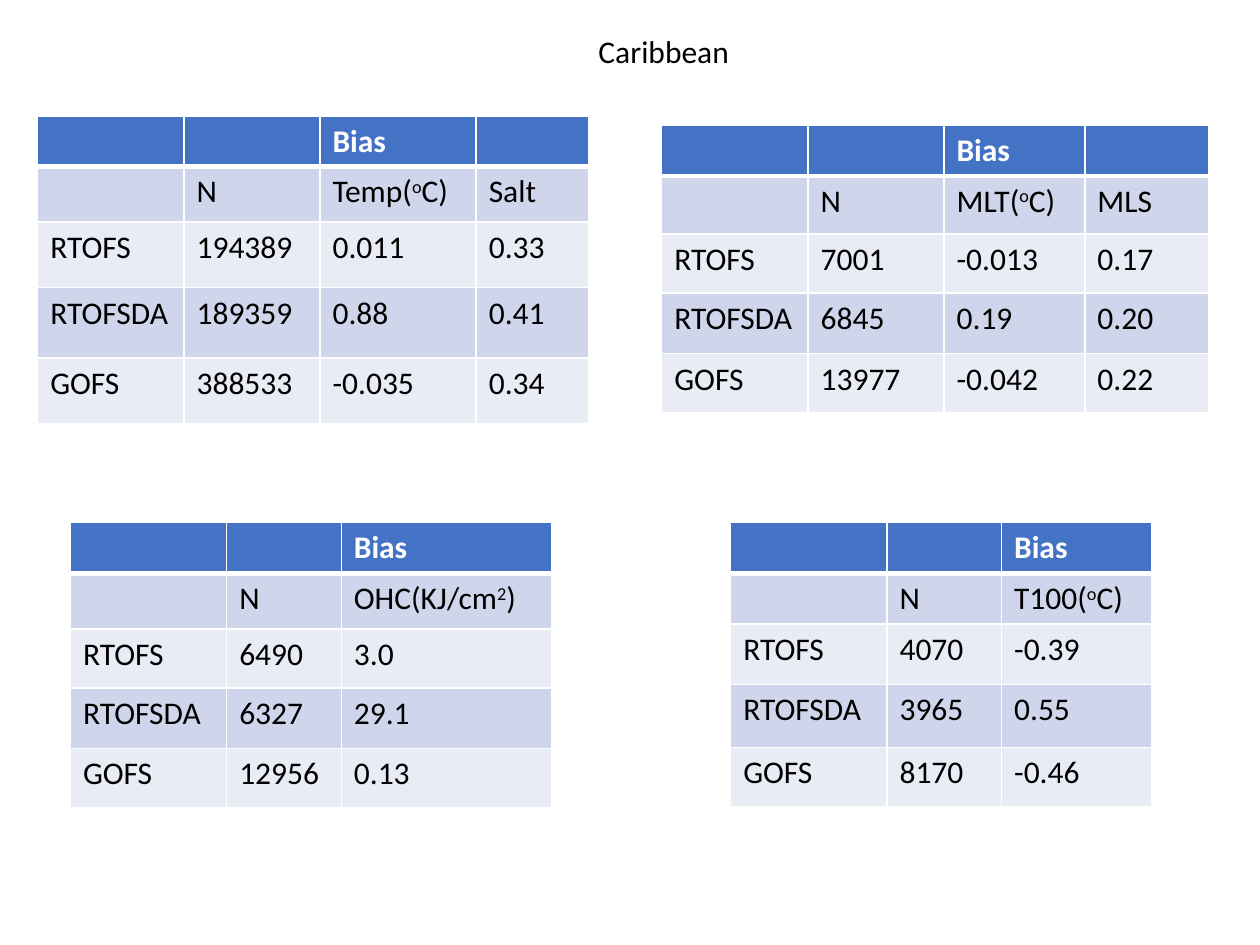
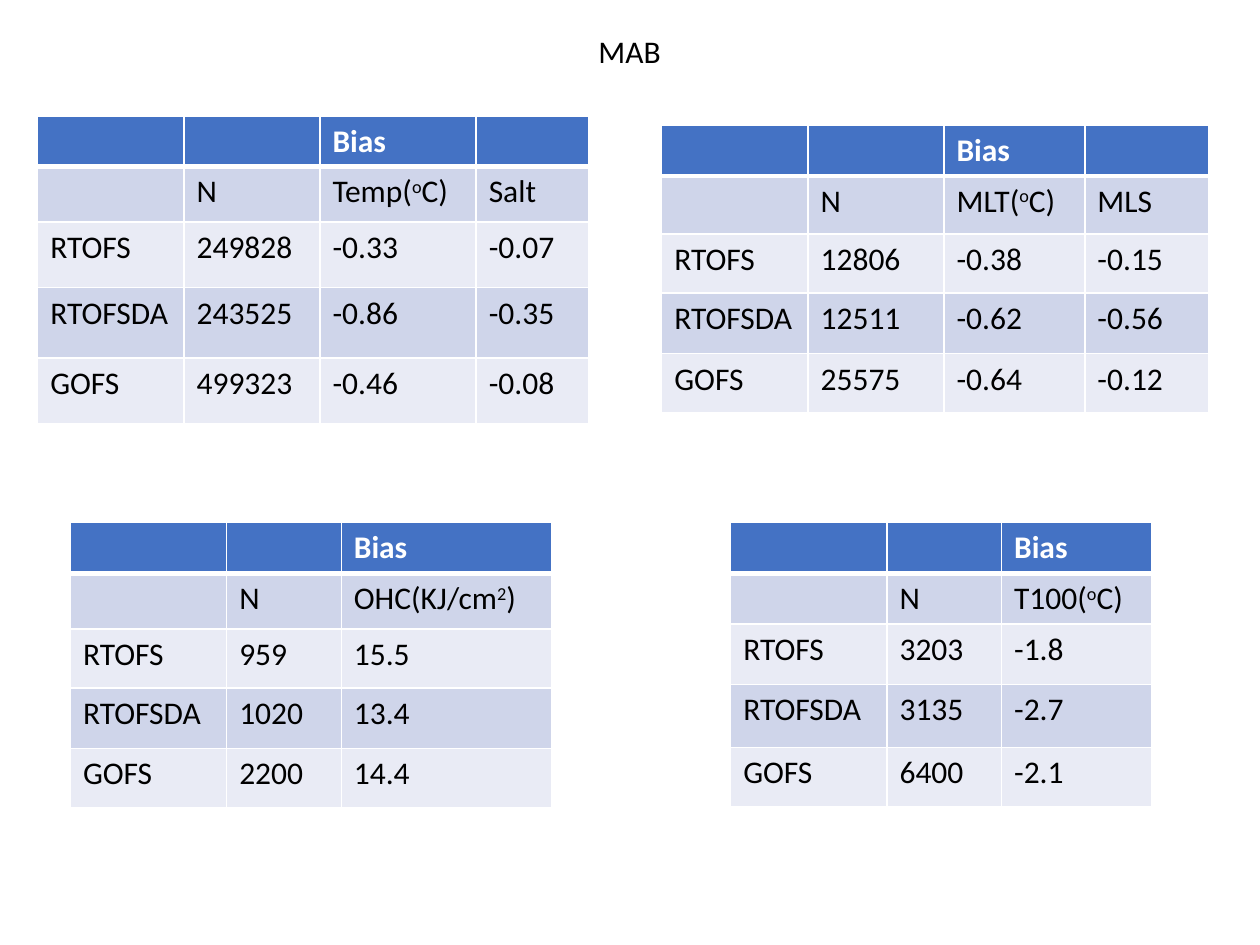
from lxml import etree
from pptx import Presentation
from pptx import util as u
from pptx.dml.color import RGBColor
from pptx.enum import text
from pptx.oxml import ns

MODELS = ("RTOFS", "RTOFSDA", "GOFS")

# Column headings (^ marks superscript) and geometry in cm, shared by the slides
TEMPERATURE_SALT = dict(
    headings=("N", "Temp(^o^C)", "Salt"), left=0.76, top=2.34,
    widths=(2.95, 2.74, 3.15, 2.26), heights=(1.02, 1.12, 1.32, 1.42, 1.32))
MIXED_LAYER = dict(
    headings=("N", "MLT(^o^C)", "MLS"), left=13.34, top=2.53,
    widths=(2.95, 2.74, 2.84, 2.49), heights=(1.02, 1.17, 1.19, 1.22, 1.19))
HEAT_CONTENT = dict(
    headings=("N", "OHC(KJ/cm^2^)"), left=1.42, top=10.52,
    widths=(3.15, 2.31, 4.24), heights=(1.04, 1.12, 1.19, 1.22, 1.19))
UPPER_100 = dict(
    headings=("N", "T100(^o^C)"), left=14.73, top=10.52,
    widths=(3.15, 2.31, 3.02), heights=(1.04, 0.97, 1.22, 1.27, 1.19))
LAYOUTS = (TEMPERATURE_SALT, MIXED_LAYER, HEAT_CONTENT, UPPER_100)

# Region, title width in cm, and one set of values per table (one row per model)
REGIONS = (
    ("Caribbean", 3.18, (
        (("194389", "0.011", "0.33"), ("189359", "0.88", "0.41"), ("388533", "-0.035", "0.34")),
        (("7001", "-0.013", "0.17"), ("6845", "0.19", "0.20"), ("13977", "-0.042", "0.22")),
        (("6490", "3.0"), ("6327", "29.1"), ("12956", "0.13")),
        (("4070", "-0.39"), ("3965", "0.55"), ("8170", "-0.46")))),
    ("MAB", 1.78, (
        (("249828", "-0.33", "-0.07"), ("243525", "-0.86", "-0.35"), ("499323", "-0.46", "-0.08")),
        (("12806", "-0.38", "-0.15"), ("12511", "-0.62", "-0.56"), ("25575", "-0.64", "-0.12")),
        (("959", "15.5"), ("1020", "13.4"), ("2200", "14.4")),
        (("3203", "-1.8"), ("3135", "-2.7"), ("6400", "-2.1")))),
)


def color(hex_code):
    return RGBColor.from_string(hex_code)


class Deck:
    FONT, SIZE = "Calibri", u.Pt(18)
    INK, WHITE, HEADER = "000000", "FFFFFF", "4472C4"
    BANDS = ("E9EBF5", "CFD5EA")

    def __init__(self):
        self.presentation = Presentation()
        self.presentation.slide_width = u.Cm(25.4)
        self.presentation.slide_height = u.Cm(19.05)
        self.slide = None

    def new_slide(self):
        title_only = self.presentation.slide_layouts[5]
        self.slide = self.presentation.slides.add_slide(title_only)

    def style(self, run, ink, bold=False):
        font = run.font
        font.name, font.size, font.bold = self.FONT, self.SIZE, bold
        font.color.rgb = color(ink)

    def title(self, region, width):
        heading = self.slide.shapes.title
        heading.left, heading.top = u.Cm(11.81), u.Cm(0.51)
        heading.width, heading.height = u.Cm(width), u.Cm(1.02)
        frame = heading.text_frame
        frame.text = region
        frame.word_wrap = False
        frame.auto_size = text.MSO_AUTO_SIZE.SHAPE_TO_FIT_TEXT
        frame.vertical_anchor = text.MSO_ANCHOR.TOP
        frame.paragraphs[0].alignment = text.PP_ALIGN.LEFT
        self.style(frame.paragraphs[0].runs[0], self.INK)

    def border(self, cell, side, points):
        line = etree.SubElement(cell._tc.get_or_add_tcPr(), ns.qn(f"a:ln{side}"),
                                w=str(u.Pt(points)))
        fill = etree.SubElement(line, ns.qn("a:solidFill"))
        etree.SubElement(fill, ns.qn("a:srgbClr"), val=self.WHITE)

    def cell(self, cell, content, row):
        # Borders come before the fill; a thick rule lies under the header
        for side in "LRTB":
            under_header = (row, side) in ((0, "B"), (1, "T"))
            self.border(cell, side, 3 if under_header else 1)
        cell.fill.solid()
        cell.fill.fore_color.rgb = color(self.BANDS[row % 2] if row else self.HEADER)
        if not content:
            return
        paragraph = cell.text_frame.paragraphs[0]
        for i, piece in enumerate(content.split("^")):
            run = paragraph.add_run()
            run.text = piece
            self.style(run, self.INK if row else self.WHITE, bold=row == 0)
            if i % 2:
                run._r.get_or_add_rPr().set("baseline", "30000")

    def bias_table(self, values, headings, left, top, widths, heights):
        header = ["", "", "Bias"] + [""] * (len(widths) - 3)
        rows = [header, ("", *headings)]
        rows += [(model, *numbers) for model, numbers in zip(MODELS, values)]
        table = self.slide.shapes.add_table(
            len(rows), len(widths), u.Cm(left), u.Cm(top),
            u.Cm(sum(widths)), u.Cm(sum(heights))).table
        for column, width in zip(table.columns, widths):
            column.width = u.Cm(width)
        for r, (contents, height) in enumerate(zip(rows, heights)):
            table.rows[r].height = u.Cm(height)
            for c, content in enumerate(contents):
                self.cell(table.cell(r, c), content, r)


def main():
    deck = Deck()
    for region, title_width, tables in REGIONS:
        deck.new_slide()
        deck.title(region, title_width)
        for layout, values in zip(LAYOUTS, tables):
            deck.bias_table(values, **layout)
    deck.presentation.save("out.pptx")


if __name__ == "__main__":
    main()
